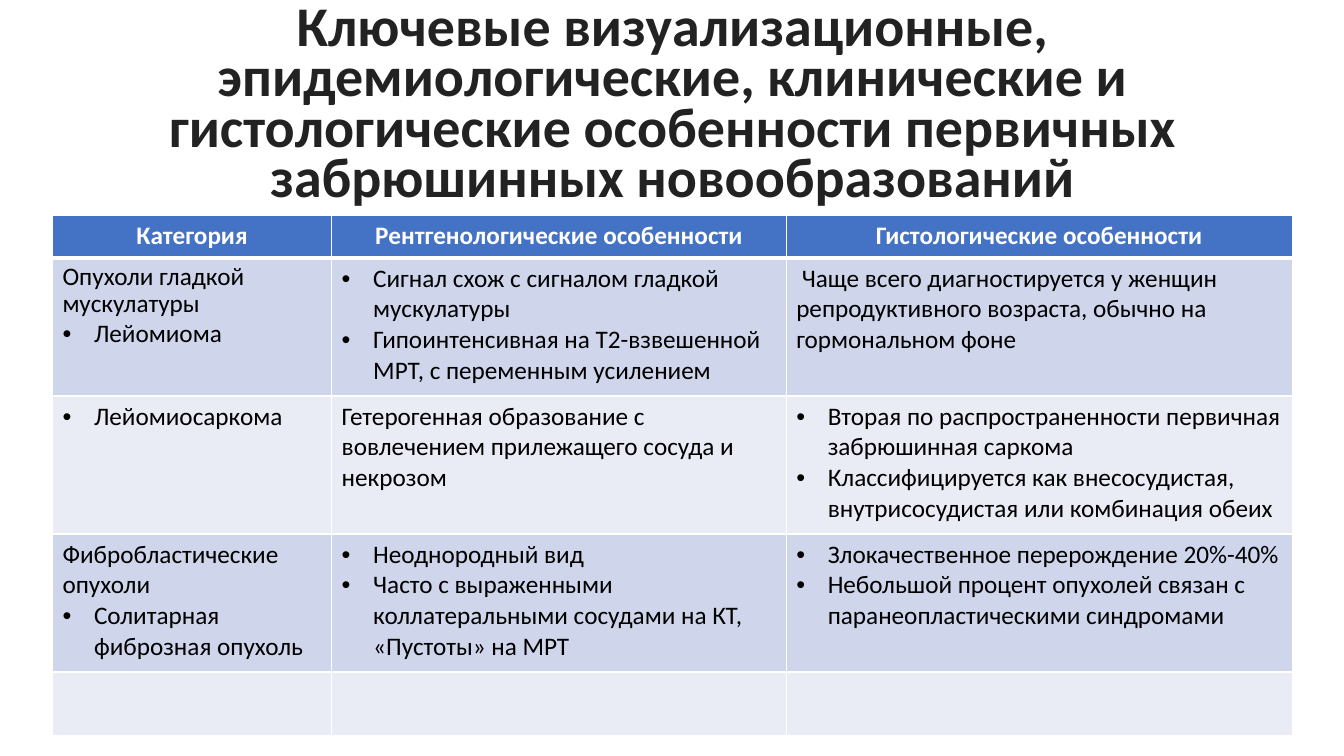
"""Build a slide with a table of features of primary retroperitoneal tumours."""
import pptx
import pptx.dml.color
import pptx.enum.text
import pptx.oxml
import pptx.oxml.ns
import pptx.util

Pt = pptx.util.Pt
RGBColor = pptx.dml.color.RGBColor
PP_ALIGN = pptx.enum.text.PP_ALIGN
MSO_ANCHOR = pptx.enum.text.MSO_ANCHOR

TITLE = ("Ключевые визуализационные, эпидемиологические, клинические и "
         "гистологические особенности первичных забрюшинных новообразований")
BULLET = "• "
ROWS = [
    [
        ["Категория"],
        ["Рентгенологические особенности"],
        ["Гистологические особенности"],
    ],
    [
        ["Опухоли гладкой мускулатуры", "• Лейомиома"],
        ["• Сигнал схож с сигналом гладкой мускулатуры",
         "• Гипоинтенсивная на Т2-взвешенной МРТ, с переменным усилением"],
        [" Чаще всего диагностируется у женщин репродуктивного возраста, "
         "обычно на гормональном фоне"],
    ],
    [
        ["• Лейомиосаркома"],
        ["Гетерогенная образование с вовлечением прилежащего сосуда и", "некрозом"],
        ["• Вторая по распространенности первичная забрюшинная саркома",
         "• Классифицируется как внесосудистая, внутрисосудистая или комбинация обеих"],
    ],
    [
        ["Фибробластические опухоли", "• Солитарная фиброзная опухоль"],
        ["• Неоднородный вид",
         "• Часто с выраженными коллатеральными сосудами на КТ, «Пустоты» на МРТ"],
        ["• Злокачественное перерождение 20%-40%",
         "• Небольшой процент опухолей связан с паранеопластическими синдромами"],
    ],
    [[], [], []],
]
COL_WIDTHS = [199.4, 324.7, 361.4]
ROW_HEIGHTS = [30.2, 98.6, 98.6, 98.6, 45.4]
LEFT, TABLE_TOP = 37.5, 154.1
WIDTH = sum(COL_WIDTHS)
INDENT = 22.5
FONT = "Calibri"

WHITE = RGBColor(0xFF, 0xFF, 0xFF)
BLACK = RGBColor(0x00, 0x00, 0x00)
TITLE_GREY = RGBColor(0x22, 0x22, 0x22)
HEADER_BLUE = RGBColor(0x44, 0x72, 0xC4)
BAND_DARK = RGBColor(0xCF, 0xD5, 0xEA)
BAND_LIGHT = RGBColor(0xE9, 0xEB, 0xF5)


def add_run(p, text, size, color, bold):
    r = p.add_run()
    r.text = text
    r.font.name = FONT
    r.font.size = Pt(size)
    r.font.bold = bold
    r.font.color.rgb = color


def add_bullet(p):
    pPr = p._p.get_or_add_pPr()
    pPr.set("marL", str(Pt(INDENT)))
    pPr.set("indent", str(-Pt(INDENT)))
    ns = pptx.oxml.ns.nsdecls("a")
    pPr.append(pptx.oxml.parse_xml(f'<a:buFont {ns} typeface="Arial"/>'))
    pPr.append(pptx.oxml.parse_xml(f'<a:buChar {ns} char="{BULLET.strip()}"/>'))


def set_borders(cell, row):
    tcPr = cell._tc.get_or_add_tcPr()
    widths = {"L": 1, "R": 1, "T": 3 if row == 1 else 1, "B": 3 if row == 0 else 1}
    for side, width in widths.items():
        tcPr.append(pptx.oxml.parse_xml(
            f'<a:ln{side} {pptx.oxml.ns.nsdecls("a")} w="{Pt(width)}"><a:solidFill>'
            f'<a:srgbClr val="{WHITE}"/></a:solidFill></a:ln{side}>'))


def fill_cell(cell, row, paragraphs):
    header = row == 0
    set_borders(cell, row)
    cell.fill.solid()
    cell.fill.fore_color.rgb = HEADER_BLUE if header else BAND_DARK if row % 2 else BAND_LIGHT
    tf = cell.text_frame
    for i, text in enumerate(paragraphs):
        p = tf.add_paragraph() if i else tf.paragraphs[0]
        p.alignment = PP_ALIGN.CENTER if header else PP_ALIGN.LEFT
        if text.startswith(BULLET):
            add_bullet(p)
        add_run(p, text.removeprefix(BULLET), 18, WHITE if header else BLACK, header)


def add_title(slide):
    sp = slide.shapes.add_textbox(Pt(LEFT), Pt(0), Pt(WIDTH), Pt(TABLE_TOP))
    tf = sp.text_frame
    tf.word_wrap = True
    tf.vertical_anchor = MSO_ANCHOR.MIDDLE
    p = tf.paragraphs[0]
    p.alignment = PP_ALIGN.CENTER
    p.line_spacing = Pt(36)
    add_run(p, TITLE, 40, TITLE_GREY, True)


def add_feature_table(slide):
    table = slide.shapes.add_table(
        len(ROWS), len(COL_WIDTHS), Pt(LEFT), Pt(TABLE_TOP),
        Pt(WIDTH), Pt(sum(ROW_HEIGHTS))).table
    for column, width in zip(table.columns, COL_WIDTHS):
        column.width = Pt(width)
    for row, height in enumerate(ROW_HEIGHTS):
        table.rows[row].height = Pt(height)
        for col, paragraphs in enumerate(ROWS[row]):
            fill_cell(table.cell(row, col), row, paragraphs)
    table.cell(1, 0).text_frame.paragraphs[0].line_spacing = 0.9


def main():
    prs = pptx.Presentation()
    prs.slide_width, prs.slide_height = Pt(960), Pt(540)
    slide = prs.slides.add_slide(prs.slide_layouts[6])
    add_feature_table(slide)
    add_title(slide)
    prs.save("out.pptx")


if __name__ == "__main__":
    main()
